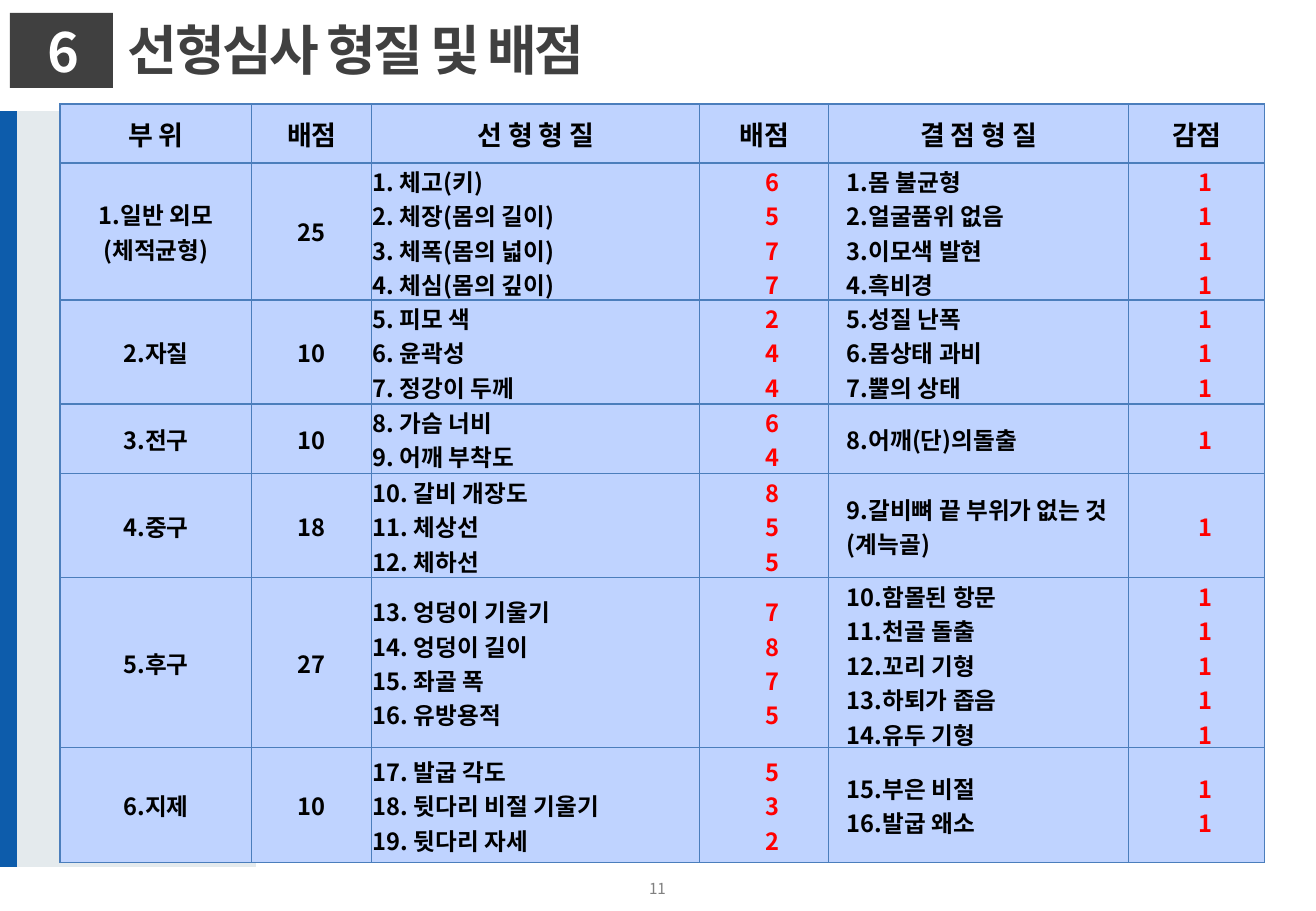
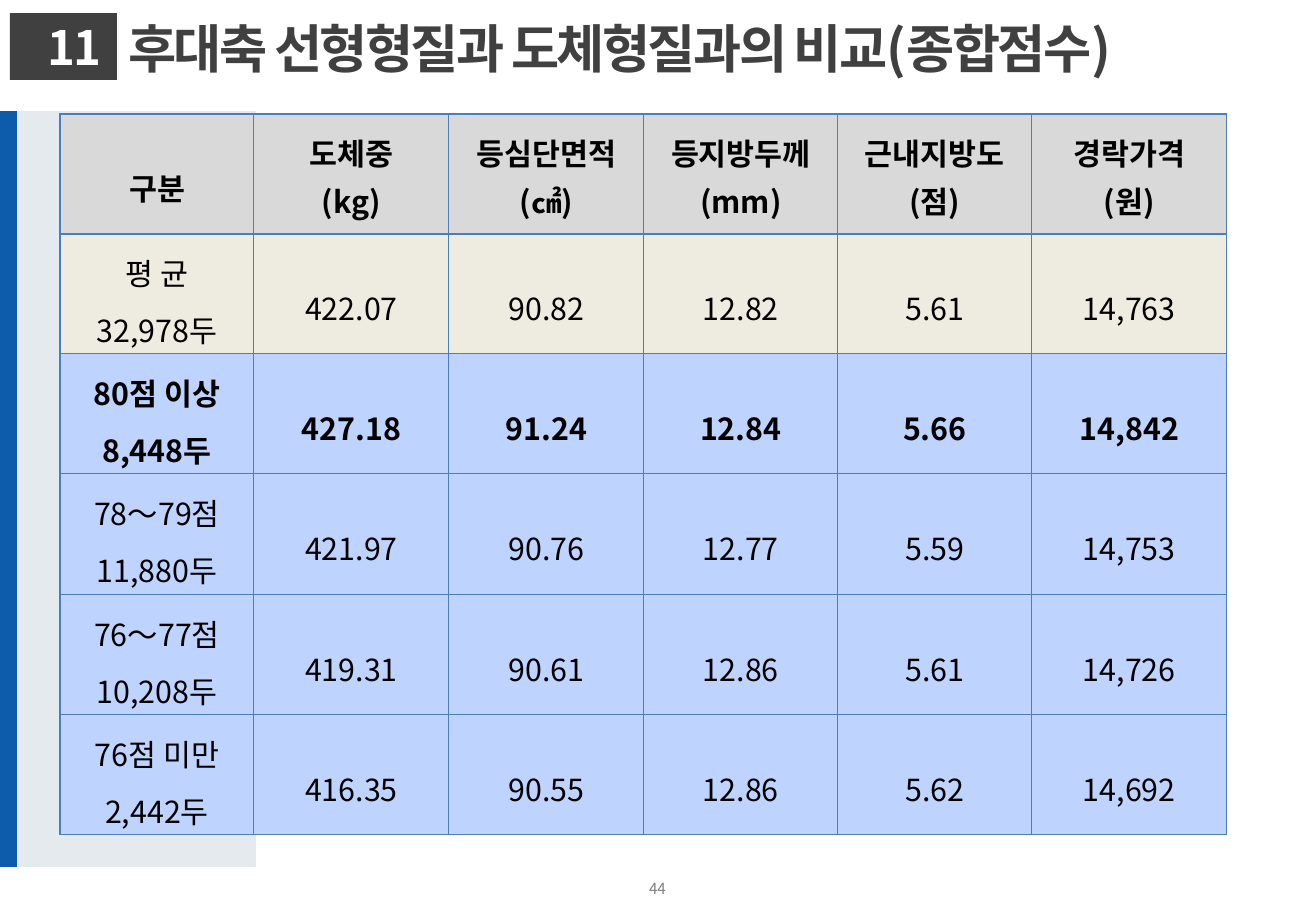
import itertools

import pptx
import pptx.dml.color
import pptx.enum.shapes
import pptx.enum.text
import pptx.oxml
import pptx.oxml.ns
import pptx.util

SCALE = 7526  # EMU per px
FONT = "Noto Sans CJK KR"
COLORS = {
    "dark": "404040", "white": "FFFFFF", "black": "000000", "red": "FF0000",
    "gray": "808080", "panel": "E4EAED", "stripe": "0D5CAB", "border": "4B7EBC",
    "blue": "BFD3FF", "header": "D9D9D9", "cream": "EEECE1",
}
LEFT = pptx.enum.text.PP_ALIGN.LEFT
CENTER = pptx.enum.text.PP_ALIGN.CENTER
MIDDLE = pptx.enum.text.MSO_ANCHOR.MIDDLE
GROW = pptx.enum.text.MSO_AUTO_SIZE.SHAPE_TO_FIT_TEXT
SIDES = ("margin_left", "margin_top", "margin_right", "margin_bottom")


def px(length):
    return pptx.util.Emu(length * SCALE)


def color(name):
    return pptx.dml.color.RGBColor.from_string(COLORS[name])


def split_evenly(total, parts):
    """Whole-px sizes of equal parts that add up to the total."""
    edges = [round(total * i / parts) for i in range(parts + 1)]
    return [b - a for a, b in zip(edges, edges[1:])]


class Deck:
    def __init__(self, width, height):
        self.prs = pptx.Presentation()
        self.prs.slide_width, self.prs.slide_height = px(width), px(height)
        self.slide = None

    def add_lines(self, frame, text, size, ink="black", bold=False, align=LEFT,
                  spacing=None, indent=0, track=0):
        """One paragraph for each line of the text."""
        for i, line in enumerate(text.split("\n")):
            paragraph = frame.add_paragraph() if i else frame.paragraphs[0]
            paragraph.alignment = align
            if spacing:
                paragraph.line_spacing = spacing
            if indent:
                props = paragraph._p.get_or_add_pPr()
                props.set("marL", str(px(indent)))
                props.set("indent", "0")
            run = paragraph.add_run()
            run.text = line
            font = {"size": pptx.util.Pt(size), "bold": bold, "name": FONT}
            for key, value in font.items():
                setattr(run.font, key, value)
            run.font.color.rgb = color(ink)
            run_props = run._r.get_or_add_rPr()
            if track:
                run_props.set("spc", str(track))
            east_asian = pptx.oxml.parse_xml(
                f'<a:ea {pptx.oxml.ns.nsdecls("a")} typeface="{FONT}"/>')
            run_props.find(pptx.oxml.ns.qn("a:latin")).addnext(east_asian)

    def set_frame(self, frame, insets, **values):
        values.update(zip(SIDES, map(px, insets)))
        values = {"word_wrap": True, "vertical_anchor": MIDDLE} | values
        for key, value in values.items():
            setattr(frame, key, value)

    def rect(self, box, fill):
        shape = self.slide.shapes.add_shape(
            pptx.enum.shapes.MSO_SHAPE.RECTANGLE, *map(px, box))
        shape.shadow.inherit = False
        shape.fill.solid()
        shape.fill.fore_color.rgb = color(fill)
        shape.line.fill.background()
        return shape

    def text(self, box, text, size, insets=(0, 0, 0, 0), frame_format=None, **style):
        frame = self.slide.shapes.add_textbox(*map(px, box)).text_frame
        self.set_frame(frame, insets, **(frame_format or {}))
        self.add_lines(frame, text, size, **style)

    def start(self, page):
        """New slide with the side bands and the page number."""
        self.slide = self.prs.slides.add_slide(self.prs.slide_layouts[6])
        self.rect((0, 111, 256, 756), "panel")
        self.rect((0, 111, 17, 756), "stripe")
        self.text((504, 877, 307, 23), page, 9, ink="gray", align=CENTER)

    def heading(self, number, number_box, number_size, title, title_box, title_size):
        style = {"bold": True, "track": -150}
        frame = self.rect(number_box, "dark").text_frame
        self.set_frame(frame, (38, 5, 15, 5), auto_size=GROW)
        self.add_lines(frame, number, number_size, ink="white", **style)
        self.text(title_box, title, title_size, (15, 10, 10, 10),
                  {"auto_size": GROW}, ink="dark", **style)

    def table(self, left, top, widths, heights, rows, insets, look):
        """look(row, column) gives the fill and the text style of a cell."""
        table = self.slide.shapes.add_table(
            len(heights), len(widths), px(left), px(top),
            px(sum(widths)), px(sum(heights))).table
        table.first_row = table.horz_banding = False
        for column, width in zip(table.columns, widths):
            column.width = px(width)
        for row, height in zip(table.rows, heights):
            row.height = px(height)
        for (r, row), c in itertools.product(enumerate(rows), range(len(widths))):
            cell = table.cell(r, c)
            fill, style = look(r, c)
            cell.vertical_anchor = MIDDLE
            for side, inset in zip(SIDES, insets):
                setattr(cell, side, px(inset))
            self.borders(cell)
            cell.fill.solid()
            cell.fill.fore_color.rgb = color(fill)
            self.add_lines(cell.text_frame, row[c], **style)

    def borders(self, cell):
        props = cell._tc.get_or_add_tcPr()
        for side in ("lnL", "lnR", "lnT", "lnB"):
            props.append(pptx.oxml.parse_xml(
                f'<a:{side} {pptx.oxml.ns.nsdecls("a")} w="9525"><a:solidFill>'
                f'<a:srgbClr val="{COLORS["border"]}"/></a:solidFill></a:{side}>'))


# Scoring: part, points, linear traits, their points, defects
SCORING_HEAD = ("부 위", "배점", "선 형 형 질", "배점", "결 점 형 질", "감점")
SCORING = [
    ("1.일반 외모\n(체적균형)", "25",
     ["체고(키)", "체장(몸의 길이)", "체폭(몸의 넓이)", "체심(몸의 깊이)"], "6577",
     ["몸 불균형", "얼굴품위 없음", "이모색 발현", "흑비경"]),
    ("2.자질", "10", ["피모 색", "윤곽성", "정강이 두께"], "244",
     ["성질 난폭", "몸상태 과비", "뿔의 상태"]),
    ("3.전구", "10", ["가슴 너비", "어깨 부착도"], "64", ["어깨(단)의돌출"]),
    ("4.중구", "18", ["갈비 개장도", "체상선", "체하선"], "855",
     ["갈비뼈 끝 부위가 없는 것(계늑골)"]),
    ("5.후구", "27", ["엉덩이 기울기", "엉덩이 길이", "좌골 폭", "유방용적"], "7875",
     ["함몰된 항문", "천골 돌출", "꼬리 기형", "하퇴가 좁음", "유두 기형"]),
    ("6.지제", "10", ["발굽 각도", "뒷다리 비절 기울기", "뒷다리 자세"], "532",
     ["부은 비절", "발굽 왜소"]),
]

# Carcass results by total score
CARCASS = [
    ("구분", "도체중\n(kg)", "등심단면적\n(㎠)", "등지방두께\n(mm)",
     "근내지방도\n(점)", "경락가격\n(원)"),
    ("평 균\n32,978두", "422.07", "90.82", "12.82", "5.61", "14,763"),
    ("80점 이상\n8,448두", "427.18", "91.24", "12.84", "5.66", "14,842"),
    ("78～79점\n11,880두", "421.97", "90.76", "12.77", "5.59", "14,753"),
    ("76～77점\n10,208두", "419.31", "90.61", "12.86", "5.61", "14,726"),
    ("76점 미만\n2,442두", "416.35", "90.55", "12.86", "5.62", "14,692"),
]


def scoring_rows():
    """Traits and defects are numbered through all parts."""
    trait_no, defect_no = itertools.count(1), itertools.count(1)
    yield SCORING_HEAD
    for part, points, traits, trait_points, defects in SCORING:
        yield (part, points,
               "\n".join(f"{next(trait_no)}. {trait}" for trait in traits),
               "\n".join(trait_points),
               "\n".join(f"{next(defect_no)}.{defect}" for defect in defects),
               "\n".join("1" for _ in defects))


def scoring_look(row, column):
    style = {"size": 14 if row else 16, "bold": True, "align": CENTER}
    if row and column in (2, 4):
        style["align"] = LEFT
    if row and column > 2:
        style["indent"] = 17
    if row and column in (3, 5):
        style["ink"] = "red"
    return "blue", style


def carcass_look(row, column):
    fill = {0: "header", 1: "cream"}.get(row, "blue")
    if row == 0:
        spacing = 1.1 if column else 1.6
    else:
        spacing = 1.6 if column else 1.3
    return fill, {"size": 18, "bold": row in (0, 2), "align": CENTER,
                  "spacing": spacing}


def main():
    deck = Deck(1316, 911)

    # Linear traits and points
    deck.start("11")
    deck.heading("6", (10, 13, 103, 75), 32,
                 "선형심사 형질 및 배점", (113, 6, 660, 85), 32)
    deck.table(60, 104, [192, 120, 328, 129, 300, 136],
               [59, 137, 104, 70, 104, 170, 115], scoring_rows(),
               (1, 1, 1, 1), scoring_look)

    # Comparison with carcass traits
    deck.start("44")
    deck.heading("11", (10, 13, 107, 67), 28,
                 "후대축 선형형질과 도체형질과의 비교(종합점수)",
                 (113, 6, 1203, 83), 31)
    deck.table(60, 114, split_evenly(1167, 6), split_evenly(721, 6), CARCASS,
               (9, 2, 9, 2), carcass_look)

    deck.prs.save("out.pptx")


if __name__ == "__main__":
    main()
